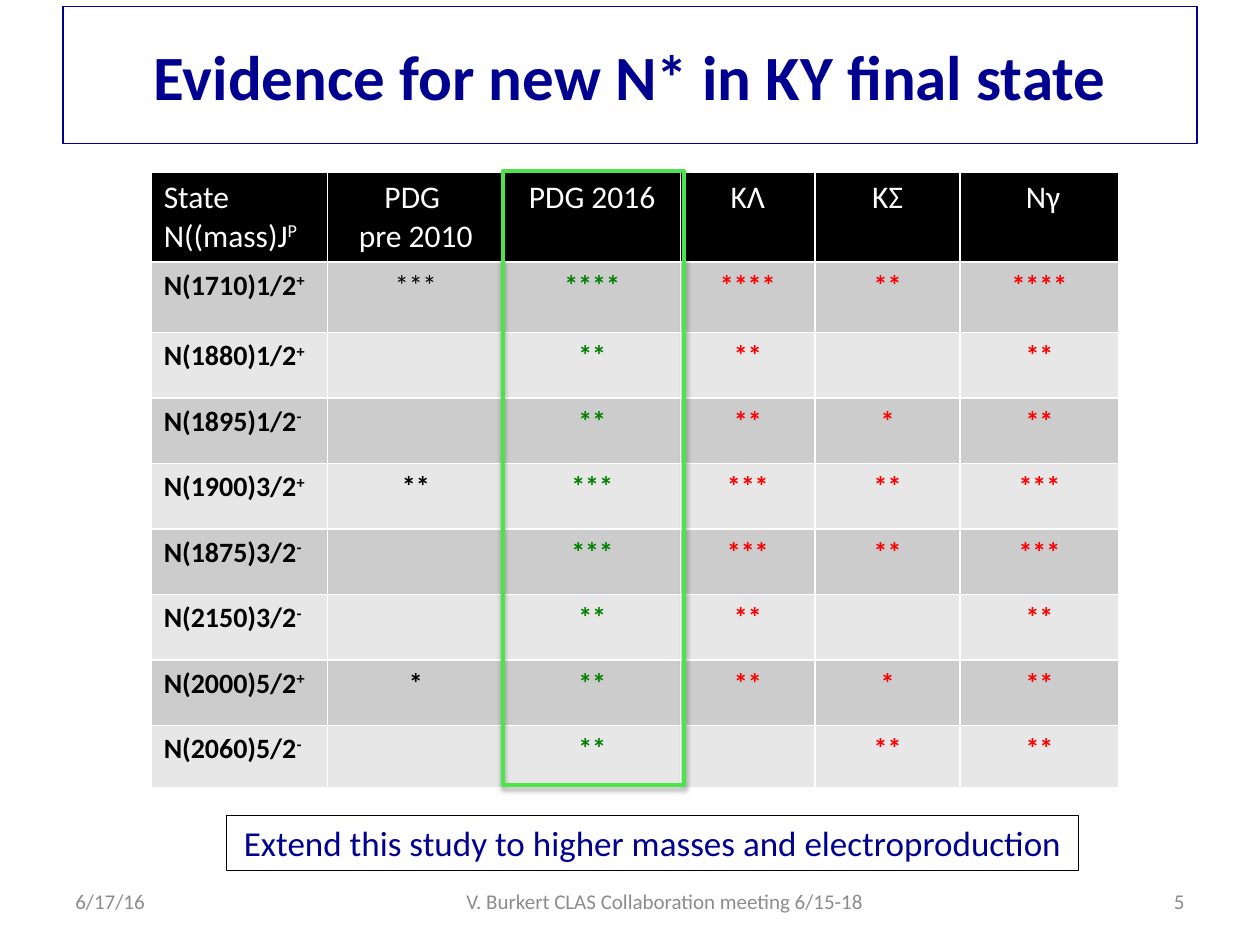
"""Build a slide that tabulates the evidence for new N* states in KY final states."""
from lxml import etree
from pptx import Presentation
from pptx import util as u
from pptx.dml.color import RGBColor
from pptx.enum import shapes, text
from pptx.oxml import ns

WIDTH, HEIGHT = 10, 7.5
NAVY, BLACK, WHITE, GRAY = "000090", "000000", "FFFFFF", "8C8C8C"
GREEN, RED, BRIGHT_GREEN = "008000", "FF0000", "4CE44B"
BANDS = ("CCCCCC", "E7E7E7")
LEFT, CENTER, RIGHT = text.PP_ALIGN.LEFT, text.PP_ALIGN.CENTER, text.PP_ALIGN.RIGHT

TITLE = "Evidence for new N* in KY final state"
CONCLUSION = "Extend this study to higher masses and electroproduction"
HEADERS = ["State\nN((mass)J^P", "PDG \npre 2010", "PDG 2016", "KΛ", "KΣ", " Nγ"]
STATES = [
    ("N(1710)1/2^+", 3, 4, 4, 2, 4),
    ("N(1880)1/2^+", 0, 2, 2, 0, 2),
    ("N(1895)1/2^-", 0, 2, 2, 1, 2),
    ("N(1900)3/2^+", 2, 3, 3, 2, 3),
    ("N(1875)3/2^-", 0, 3, 3, 2, 3),
    ("N(2150)3/2^-", 0, 2, 2, 0, 2),
    ("N(2000)5/2^+", 1, 2, 2, 1, 2),
    ("N(2060)5/2^-", 0, 2, 0, 2, 2),
]
FOOTERS = [
    ("6/17/16", 0.5, 2.33, LEFT),
    ("V. Burkert CLAS Collaboration meeting 6/15-18 ", 3.42, 3.75, CENTER),
    ("5", 7.17, 2.33, RIGHT),
]
COLUMN_WIDTHS = [1.4, 1.4, 1.4, 1.07, 1.15, 1.26]
ROW_HEIGHTS = [0.7, 0.56] + [0.52] * 6 + [0.49]
COLUMN_COLORS = [BLACK, BLACK, GREEN, RED, RED, RED]
TABLE_LEFT, TABLE_TOP = 1.2, 1.37


def rgb(value):
    return RGBColor.from_string(value)


def inches(*values):
    return [u.Inches(value) for value in values]


def write(frame, content, size, color, align=LEFT, bold=False):
    """Fill a text frame; a caret starts a superscript."""
    frame.text = ""
    for index, line in enumerate(content.split("\n")):
        paragraph = frame.paragraphs[0] if index == 0 else frame.add_paragraph()
        paragraph.alignment = align
        for level, part in enumerate(line.split("^")):
            run = paragraph.add_run()
            run.text = part
            for name, value in {"name": "Calibri", "size": u.Pt(size), "bold": bold}.items():
                setattr(run.font, name, value)
            run.font.color.rgb = rgb(color)
            if level:
                run._r.get_or_add_rPr().set("baseline", "30000")


def outline(shape, color, width):
    shape.fill.background()
    shape.line.color.rgb = rgb(color)
    shape.line.width = u.Pt(width)


def add_box(slide, place, color, width):
    shape = slide.shapes.add_shape(shapes.MSO_SHAPE.RECTANGLE, *inches(*place))
    shape.shadow.inherit = False
    outline(shape, color, width)
    return shape


def add_title(slide):
    title = slide.shapes.title
    title.left, title.top, title.width, title.height = inches(0.5, 0.05, 9, 1.09)
    outline(title, NAVY, 0.75)
    title.text_frame.vertical_anchor = text.MSO_ANCHOR.MIDDLE
    write(title.text_frame, TITLE, 36, NAVY, CENTER, True)


def add_state_table(slide):
    place = inches(TABLE_LEFT, TABLE_TOP, sum(COLUMN_WIDTHS), sum(ROW_HEIGHTS))
    table = slide.shapes.add_table(len(ROW_HEIGHTS), len(COLUMN_WIDTHS), *place).table
    for column, width in zip(table.columns, COLUMN_WIDTHS):
        column.width = u.Inches(width)
    for row, height in zip(table.rows, ROW_HEIGHTS):
        row.height = u.Inches(height)
    for i, values in enumerate([HEADERS] + STATES):
        for j, value in enumerate(values):
            cell = table.cell(i, j)
            cell.fill.solid()
            cell.fill.fore_color.rgb = rgb(BANDS[(i - 1) % 2] if i else BLACK)
            content = "*" * value if isinstance(value, int) else value
            if content:
                size, color = (16, COLUMN_COLORS[j]) if i else (18, WHITE)
                bold = i > 0 and (i, j) != (1, 1)
                write(cell.text_frame, content, size, color, CENTER if j else LEFT, bold)


def add_conclusion(slide):
    box = add_box(slide, (1.8, 6.47, 6.76, 0.44), BLACK, 0.75)
    box.text_frame.word_wrap = False
    write(box.text_frame, CONCLUSION, 20, NAVY, CENTER)


def add_highlight(slide):
    left = TABLE_LEFT + sum(COLUMN_WIDTHS[:2])
    frame = add_box(slide, (left - 0.01, TABLE_TOP - 0.01, 1.44, 4.87), BRIGHT_GREEN, 2.25)
    effects = frame._element.spPr.find(ns.qn("a:effectLst"))
    shadow = etree.SubElement(effects, ns.qn("a:outerShdw"), blurRad=str(u.Pt(3.1)),
                              dist=str(u.Pt(1.8)), dir="5400000", rotWithShape="0")
    color = etree.SubElement(shadow, ns.qn("a:srgbClr"), val=BLACK)
    etree.SubElement(color, ns.qn("a:alpha"), val="35000")


def add_footers(slide):
    for content, left, width, align in FOOTERS:
        frame = slide.shapes.add_textbox(*inches(left, 6.95, width, 0.4)).text_frame
        frame.word_wrap = True
        frame.vertical_anchor = text.MSO_ANCHOR.MIDDLE
        write(frame, content, 12, GRAY, align)


def main():
    presentation = Presentation()
    presentation.slide_width, presentation.slide_height = inches(WIDTH, HEIGHT)
    slide = presentation.slides.add_slide(presentation.slide_layouts[5])
    for add_part in (add_title, add_state_table, add_conclusion, add_highlight, add_footers):
        add_part(slide)
    presentation.save("out.pptx")


if __name__ == "__main__":
    main()
